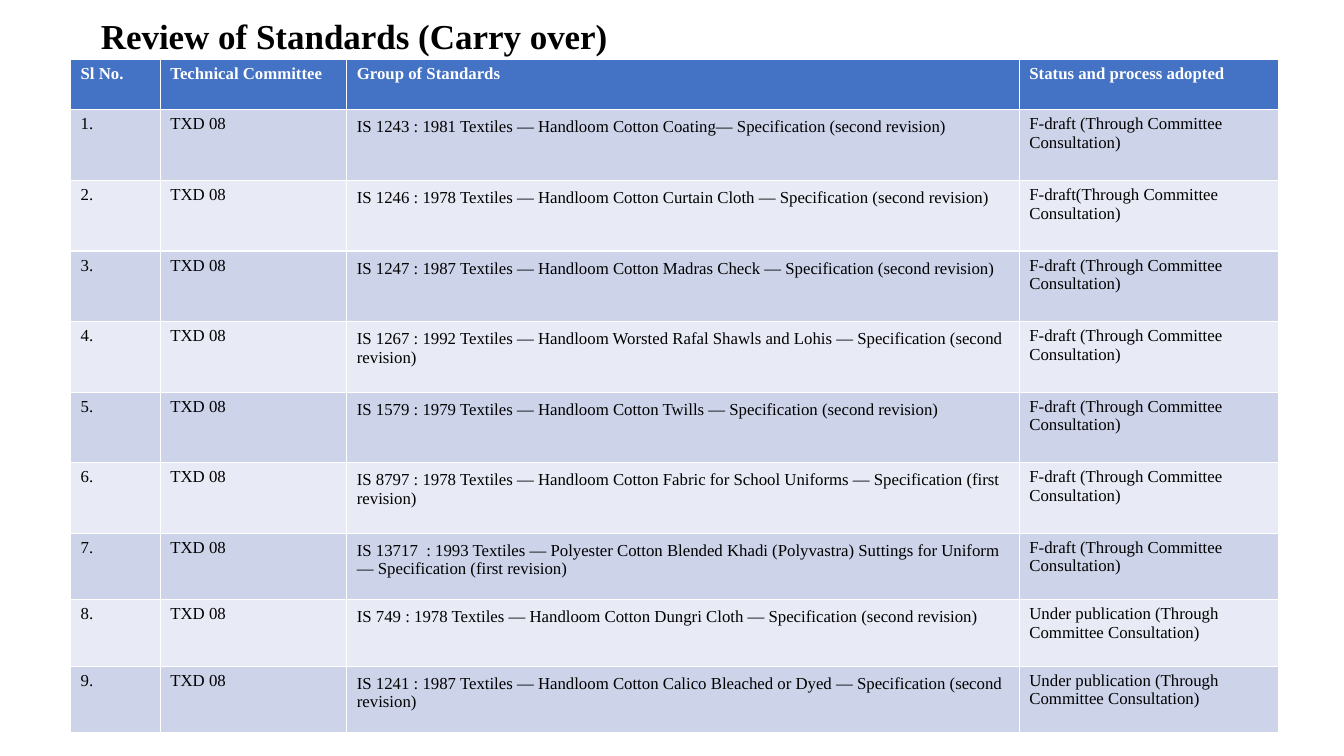
from pptx import Presentation
from pptx.dml.color import RGBColor
from pptx.enum.text import MSO_ANCHOR, MSO_AUTO_SIZE, PP_ALIGN
from pptx.util import Inches, Pt

BOTTOM = MSO_ANCHOR.BOTTOM
NO_AUTOFIT = MSO_AUTO_SIZE.NONE
LEFT = PP_ALIGN.LEFT

FONT = "Times New Roman"
BLACK, WHITE = "000000", "FFFFFF"
HEADER_FILL = "4472C4"
BAND_FILLS = ["E8EBF5", "CDD4EA"]

COMMITTEE = "TXD 08"
F_DRAFT = "F-draft (Through Committee Consultation)"
PUBLICATION = "Under publication (Through Committee Consultation)"

HEADINGS = ["Sl No.", "Technical Committee", "Group of Standards", "Status and process adopted"]
STANDARDS = [
    ("IS 1243 : 1981 Textiles — Handloom Cotton Coating— Specification (second revision)", F_DRAFT),
    ("IS 1246 : 1978 Textiles — Handloom Cotton Curtain Cloth — Specification (second revision)",
     "F-draft(Through Committee Consultation)"),
    ("IS 1247 : 1987 Textiles — Handloom Cotton Madras Check — Specification (second revision)", F_DRAFT),
    ("IS 1267 : 1992 Textiles — Handloom Worsted Rafal Shawls and Lohis — Specification (second revision)",
     F_DRAFT),
    ("IS 1579 : 1979 Textiles — Handloom Cotton Twills — Specification (second revision)", F_DRAFT),
    ("IS 8797 : 1978 Textiles — Handloom Cotton Fabric for School Uniforms — Specification (first revision)",
     F_DRAFT),
    ("IS 13717  : 1993 Textiles — Polyester Cotton Blended Khadi (Polyvastra) Suttings for Uniform"
     " — Specification (first revision)", F_DRAFT),
    ("IS 749 : 1978 Textiles — Handloom Cotton Dungri Cloth — Specification (second revision)", PUBLICATION),
    ("IS 1241 : 1987 Textiles — Handloom Cotton Calico Bleached or Dyed — Specification (second revision)",
     PUBLICATION),
]
COLUMN_WIDTHS = [0.89, 1.85, 6.67, 2.57]
ROW_HEIGHTS = [0.5] + [0.7] * 6 + [0.66] * 3
STANDARD_COLUMN = 2


def color(hex_code):
    return RGBColor.from_string(hex_code)


def format_text(para, size, hex_code, bold):
    for span in para.runs:
        span.font.name = FONT
        span.font.size = Pt(size)
        span.font.bold = bold
        span.font.color.rgb = color(hex_code)


deck = Presentation()
deck.slide_width = Inches(13.33)
deck.slide_height = Inches(7.5)
page = deck.slides.add_slide(deck.slide_layouts[5])

title = page.shapes.title
title.left, title.top = Inches(0.9), Inches(0.08)
title.width, title.height = Inches(11.5), Inches(0.54)
frame = title.text_frame
frame.text = "Review of Standards (Carry over)"
frame.auto_size = NO_AUTOFIT
frame.vertical_anchor = BOTTOM
frame.paragraphs[0].alignment = LEFT
frame.paragraphs[0].line_spacing = 0.9
format_text(frame.paragraphs[0], 25, BLACK, True)

rows = [HEADINGS]
for number, (standard, status) in enumerate(STANDARDS, start=1):
    rows.append([f"{number}.", COMMITTEE, standard, status])

table = page.shapes.add_table(
    len(rows), len(HEADINGS), Inches(0.7), Inches(0.59),
    Inches(sum(COLUMN_WIDTHS)), Inches(sum(ROW_HEIGHTS))).table
for column, width in zip(table.columns, COLUMN_WIDTHS):
    column.width = Inches(width)

for row_index, texts in enumerate(rows):
    table.rows[row_index].height = Inches(ROW_HEIGHTS[row_index])
    is_header = row_index == 0
    for column_index, text in enumerate(texts):
        cell = table.cell(row_index, column_index)
        cell.fill.solid()
        cell.fill.fore_color.rgb = color(HEADER_FILL if is_header else BAND_FILLS[row_index % 2])
        if column_index == STANDARD_COLUMN and not is_header:
            cell.margin_top = cell.margin_bottom = Inches(0.08)
        cell.text_frame.text = text
        format_text(cell.text_frame.paragraphs[0], 12, WHITE if is_header else BLACK, is_header)

deck.save("out.pptx")
